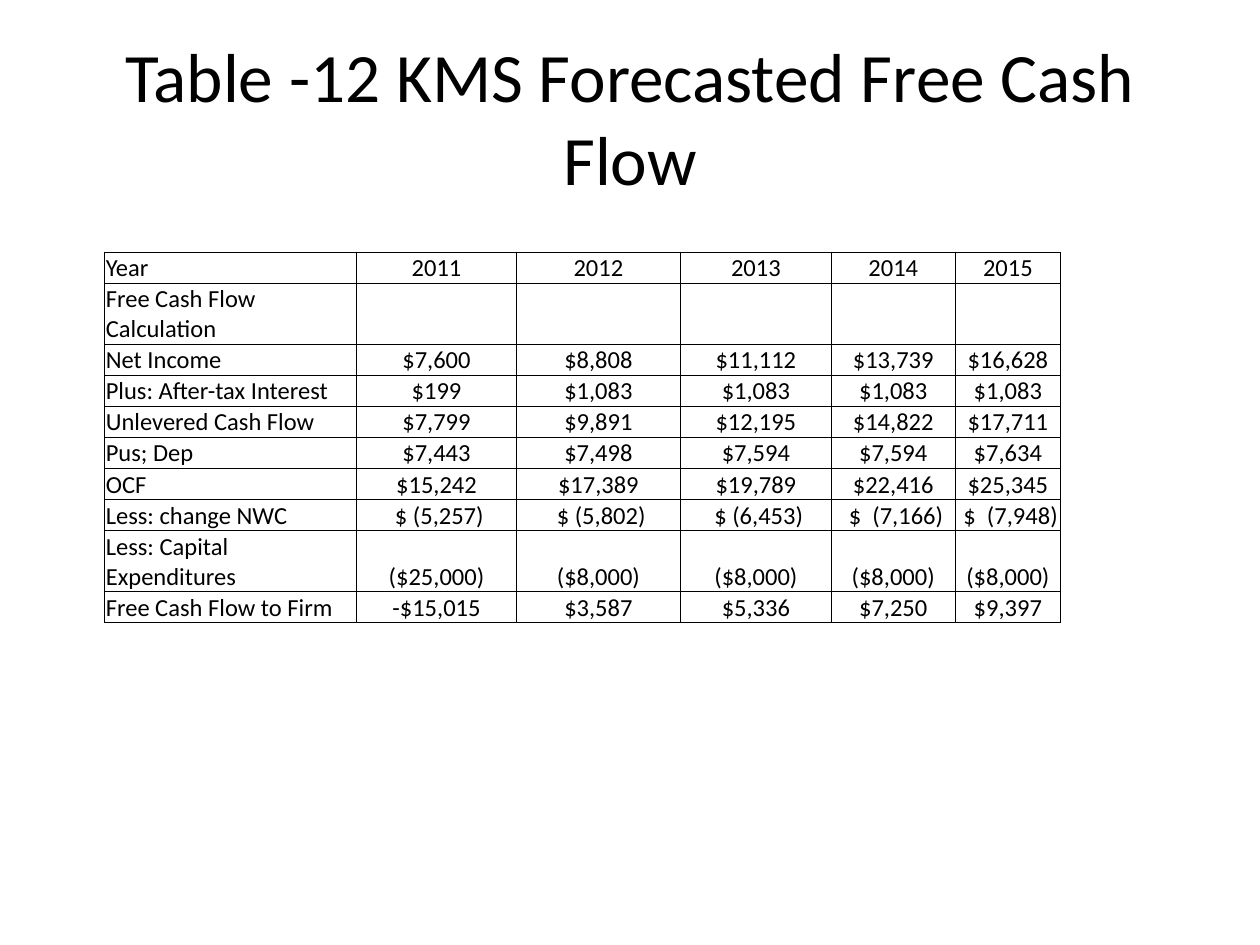
"""Build a slide with a table of forecasted free cash flow."""
from lxml import etree
from pptx import Presentation
from pptx.dml.color import RGBColor
from pptx.enum.text import MSO_ANCHOR, PP_ALIGN
from pptx.oxml.ns import qn
from pptx.util import Inches, Pt

LEFT, CENTER = PP_ALIGN.LEFT, PP_ALIGN.CENTER
MIDDLE, BOTTOM = MSO_ANCHOR.MIDDLE, MSO_ANCHOR.BOTTOM
BLACK = "000000"


def style(p, size, align):
    p.alignment = align
    p.font.name = "Calibri"
    p.font.size = Pt(size)
    p.font.bold = False
    p.font.color.rgb = RGBColor.from_string(BLACK)


def add_borders(cell, color, width):
    tcPr = cell._tc.get_or_add_tcPr()
    for side in ("lnL", "lnR", "lnT", "lnB"):
        ln = etree.SubElement(tcPr, qn(f"a:{side}"), w=str(Pt(width)))
        fill = etree.SubElement(ln, qn("a:solidFill"))
        etree.SubElement(fill, qn("a:srgbClr"), val=color)


rows = [
    ("Year", "2011", "2012", "2013", "2014", "2015"),
    ("Free Cash Flow Calculation", "", "", "", "", ""),
    ("Net Income", "$7,600", "$8,808", "$11,112", "$13,739", "$16,628"),
    ("Plus: After-tax Interest", "$199", "$1,083", "$1,083", "$1,083", "$1,083"),
    ("Unlevered Cash Flow", "$7,799", "$9,891", "$12,195", "$14,822", "$17,711"),
    ("Pus; Dep", "$7,443", "$7,498", "$7,594", "$7,594", "$7,634"),
    ("OCF", "$15,242", "$17,389", "$19,789", "$22,416", "$25,345"),
    ("Less: change NWC", " $ (5,257)", " $ (5,802)", " $ (6,453)", " $  (7,166)", " $  (7,948)"),
    ("Less: Capital Expenditures", "($25,000)", "($8,000)", "($8,000)", "($8,000)", "($8,000)"),
    ("Free Cash Flow to Firm", "-$15,015", "$3,587", "$5,336", "$7,250", "$9,397"),
]
col_widths = [2, 1.27, 1.3, 1.2, 0.98, 0.84]
row_height = 0.21

prs = Presentation()
prs.slide_width, prs.slide_height = Inches(10), Inches(7.5)
s = prs.slides.add_slide(prs.slide_layouts[5])

title = s.shapes.title
title.left, title.top = Inches(0.5), Inches(0.3)
title.width, title.height = Inches(9), Inches(1.25)
tf = title.text_frame
tf.text = "Table -12 KMS Forecasted Free Cash Flow"
tf.vertical_anchor = MIDDLE
style(tf.paragraphs[0], 39.6, CENTER)

table = s.shapes.add_table(
    len(rows), len(col_widths), Inches(0.83), Inches(2),
    Inches(sum(col_widths)), Inches(row_height * len(rows))).table
table.first_row = table.horz_banding = False
for column, width in zip(table.columns, col_widths):
    column.width = Inches(width)

for i, values in enumerate(rows):
    table.rows[i].height = Inches(row_height)
    for j, value in enumerate(values):
        cell = table.cell(i, j)
        cell.text = value
        cell.vertical_anchor = BOTTOM
        cell.margin_left = cell.margin_right = cell.margin_top = Inches(0.01)
        cell.margin_bottom = 0
        style(cell.text_frame.paragraphs[0], 14, CENTER if j else LEFT)
        add_borders(cell, BLACK, 0.5)
        cell.fill.background()

prs.save("out.pptx")
